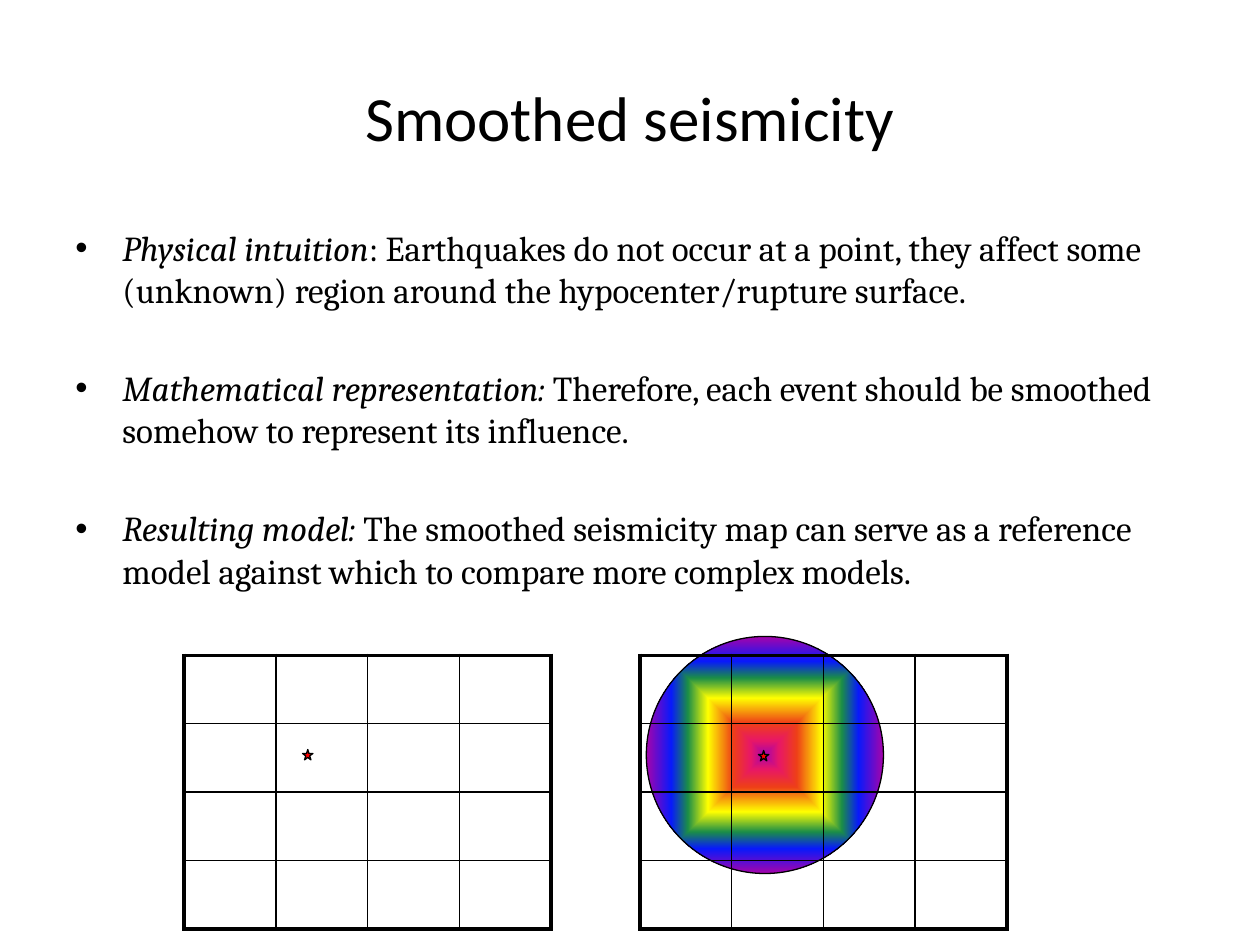
from lxml import etree
from pptx import Presentation
from pptx.dml.color import RGBColor
from pptx.enum.shapes import MSO_SHAPE as Preset
from pptx.enum.text import MSO_ANCHOR as Anchor, PP_ALIGN as Align
from pptx.oxml import parse_xml
from pptx.oxml.ns import nsdecls, qn
from pptx.util import Cm, Pt

COLORS = {"ink": "000000", "star": "FF0000"}
RAINBOW = [(0, "A603AB"), (12, "E81766"), (27, "EE3F17"), (48, "FFFF00"),
           (65, "1A8D48"), (79, "0819FB"), (100, "A603AB")]
POINTS = [
    ("Physical intuition", ": Earthquakes do not occur at a point, they affect "
     "some (unknown) region around the hypocenter/rupture surface."),
    ("Mathematical representation: ", "Therefore, each event should be "
     "smoothed somehow to represent its influence."),
    ("Resulting model: ", "The smoothed seismicity map can serve as a "
     "reference model against which to compare more complex models."),
]
GRID_SIZE = 4
CELL_WIDTH, CELL_HEIGHT = 1.85, 1.38
THIN, THICK = 1, 2.25


def add_run(paragraph, text, font="Cambria", size=20, italic=False, color="ink"):
    run = paragraph.add_run()
    run.text = text
    run.font.name, run.font.size, run.font.italic = font, Pt(size), italic
    run.font.color.rgb = RGBColor.from_string(COLORS[color])


class SlideBuilder:
    def __init__(self, slide):
        self.slide = slide
        self.ink = RGBColor.from_string(COLORS["ink"])

    def text_frame(self, left, top, width, height, anchor=Anchor.TOP):
        box = self.slide.shapes.add_textbox(Cm(left), Cm(top), Cm(width), Cm(height))
        frame = box.text_frame
        frame.word_wrap = True
        frame.vertical_anchor = anchor
        return frame

    def title(self, text, *place):
        heading = self.text_frame(*place, anchor=Anchor.MIDDLE).paragraphs[0]
        heading.alignment = Align.CENTER
        add_run(heading, text, font="Calibri", size=36)

    def bullets(self, points, *place, gap=32):
        frame = self.text_frame(*place)
        for number, (lead, statement) in enumerate(points):
            point = frame.add_paragraph() if number else frame.paragraphs[0]
            point.space_before = Pt(gap if number else 0)
            props = point._p.get_or_add_pPr()
            props.set("marL", str(Cm(0.95)))
            props.set("indent", str(-Cm(0.95)))
            etree.SubElement(props, qn("a:buFont")).set("typeface", "Arial")
            etree.SubElement(props, qn("a:buChar")).set("char", "•")
            add_run(point, lead, italic=True)
            add_run(point, statement)

    def outlined(self, preset, left, top, size):
        shape = self.slide.shapes.add_shape(preset, Cm(left), Cm(top), Cm(size), Cm(size))
        shape.shadow.inherit = False
        shape.line.color.rgb = self.ink
        shape.line.width = Pt(0.75)
        return shape

    def star(self, left, top):
        fill = self.outlined(Preset.STAR_5_POINT, left, top, 0.21).fill
        fill.solid()
        fill.fore_color.rgb = RGBColor.from_string(COLORS["star"])

    def kernel(self, left, top, size):
        circle = self.outlined(Preset.OVAL, left, top, size)
        stops = "".join(f'<a:gs pos="{pos * 1000}"><a:srgbClr val="{color}"/></a:gs>'
                        for pos, color in RAINBOW)
        gradient = parse_xml(
            f'<a:gradFill {nsdecls("a")} rotWithShape="1"><a:gsLst>{stops}</a:gsLst>'
            '<a:path path="shape"><a:fillToRect l="50000" t="50000" r="50000" b="50000"/>'
            '</a:path></a:gradFill>')
        circle._element.spPr.find(qn("a:prstGeom")).addnext(gradient)

    def grid(self, left, top):
        table = self.slide.shapes.add_table(
            GRID_SIZE, GRID_SIZE, Cm(left), Cm(top),
            Cm(GRID_SIZE * CELL_WIDTH), Cm(GRID_SIZE * CELL_HEIGHT)).table
        table.first_row = table.horz_banding = False
        for column in table.columns:
            column.width = Cm(CELL_WIDTH)
        last = GRID_SIZE - 1
        for r, row in enumerate(table.rows):
            row.height = Cm(CELL_HEIGHT)
            for c, cell in enumerate(row.cells):
                cell.fill.background()
                self.borders(cell, L=c == 0, R=c == last, T=r == 0, B=r == last)

    def borders(self, cell, **outer_sides):
        props = cell._tc.get_or_add_tcPr()
        for order, (side, outer) in enumerate(outer_sides.items()):
            width = Pt(THICK if outer else THIN)
            props.insert(order, parse_xml(
                f'<a:ln{side} {nsdecls("a")} w="{width}"><a:solidFill>'
                f'<a:srgbClr val="{COLORS["ink"]}"/></a:solidFill></a:ln{side}>'))


def main():
    deck = Presentation()
    deck.slide_width, deck.slide_height = Cm(25.4), Cm(19.05)
    builder = SlideBuilder(deck.slides.add_slide(deck.slide_layouts[6]))

    # Smoothing kernel, behind the right grid
    builder.kernel(13.03, 12.83, 4.78)

    # Title and statements
    builder.title("Smoothed seismicity", 1.27, 0.76, 22.86, 3.18)
    builder.bullets(POINTS, 1.27, 4.45, 22.86, 12.57)

    # Point event on the left, smoothed event on the right
    for grid_left, star_left, star_top in ((3.71, 6.1, 15.11), (12.9, 15.29, 15.13)):
        builder.grid(grid_left, 13.21)
        builder.star(star_left, star_top)

    deck.save("out.pptx")


if __name__ == "__main__":
    main()
